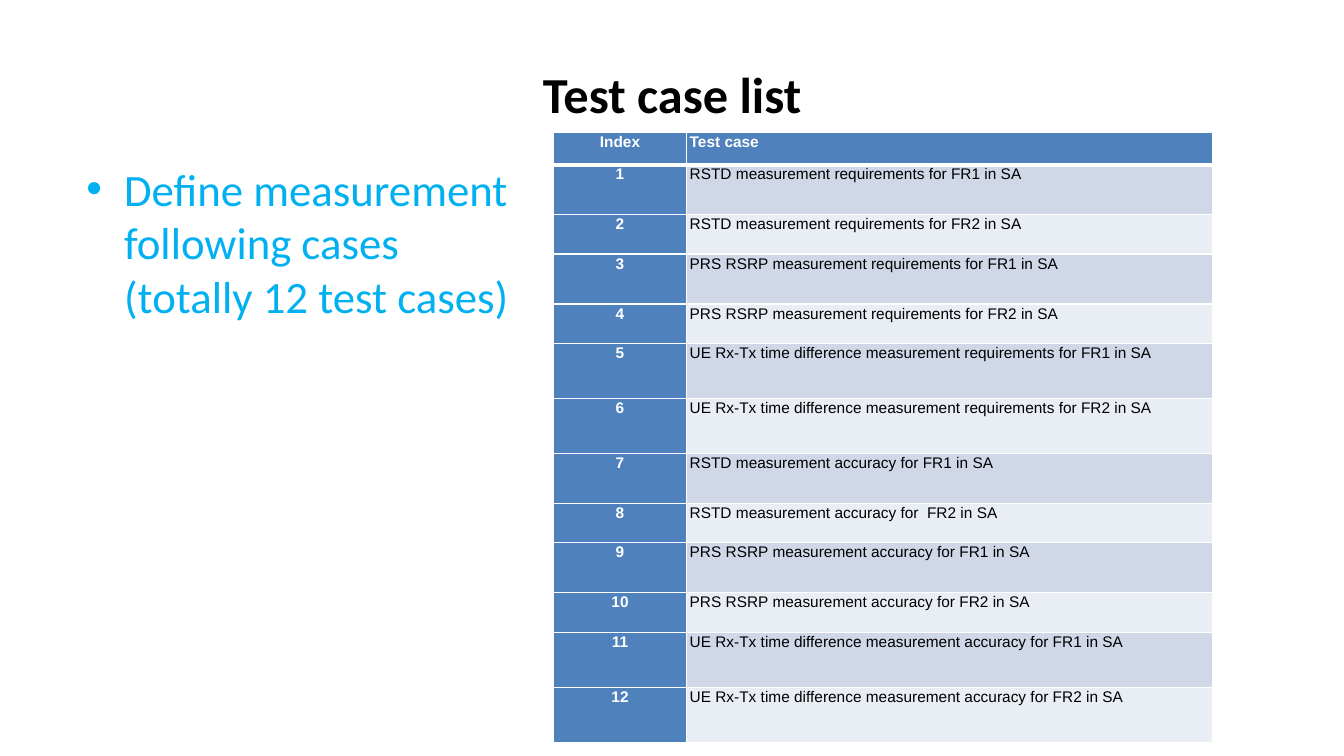
from lxml import etree
from pptx import Presentation
from pptx.dml.color import RGBColor
from pptx.enum.text import MSO_ANCHOR, PP_ALIGN
from pptx.oxml.ns import qn
from pptx.util import Cm, Pt

CENTER = PP_ALIGN.CENTER
LEFT = PP_ALIGN.LEFT
MIDDLE = MSO_ANCHOR.MIDDLE

BLACK = RGBColor(0x00, 0x00, 0x00)
WHITE = RGBColor(0xFF, 0xFF, 0xFF)
SKY = RGBColor(0x00, 0xB0, 0xF0)
BLUE = RGBColor(0x4F, 0x81, 0xBD)
BANDS = (RGBColor(0xD0, 0xD8, 0xE8), RGBColor(0xE9, 0xED, 0xF4))

TEST_CASES = [
    "RSTD measurement requirements for FR1 in SA",
    "RSTD measurement requirements for FR2 in SA",
    "PRS RSRP measurement requirements for FR1 in SA",
    "PRS RSRP measurement requirements for FR2 in SA",
    "UE Rx-Tx time difference measurement requirements for FR1 in SA",
    "UE Rx-Tx time difference measurement requirements for FR2 in SA",
    "RSTD measurement accuracy for FR1 in SA",
    "RSTD measurement accuracy for  FR2 in SA",
    "PRS RSRP measurement accuracy for FR1 in SA",
    "PRS RSRP measurement accuracy for FR2 in SA",
    "UE Rx-Tx time difference measurement accuracy for FR1 in SA",
    "UE Rx-Tx time difference measurement accuracy for FR2 in SA",
]
INDEX_WIDTH = 3.35
HEADER_HEIGHT = 0.82
PAIR_HEIGHTS = [(1.26, 0.99), (1.26, 0.99), (1.39, 1.39)] * 2
CASE_HEIGHTS = [height for pair in PAIR_HEIGHTS for height in pair]


def add_run(paragraph, text, size, font, color, bold=False):
    run = paragraph.add_run()
    run.text = text
    run.font.size = Pt(size)
    run.font.name = font
    run.font.bold = bold
    run.font.color.rgb = color


def add_title(slide, left, top, width, height):
    title = slide.shapes.add_textbox(Cm(left), Cm(top), Cm(width), Cm(height)).text_frame
    title.word_wrap = True
    title.vertical_anchor = MIDDLE
    heading = title.paragraphs[0]
    heading.alignment = CENTER
    add_run(heading, "Test case list", 36, "Calibri", BLACK, True)


def add_summary(slide, left, top, width, height):
    summary = slide.shapes.add_textbox(Cm(left), Cm(top), Cm(width), Cm(height)).text_frame
    summary.word_wrap = True
    point = summary.paragraphs[0]
    properties = point._p.get_or_add_pPr()
    properties.set("marL", str(Cm(0.95)))
    properties.set("indent", str(-Cm(0.95)))
    etree.SubElement(properties, qn("a:buFont"), typeface="Arial")
    etree.SubElement(properties, qn("a:buChar"), char="•")
    add_run(point, "Define measurement following cases (totally 12 test cases)",
            32, "Calibri", SKY)


def add_borders(cell, bottom_width, top_width):
    properties = cell._tc.get_or_add_tcPr()
    for side, width in (("L", 1), ("R", 1), ("T", top_width), ("B", bottom_width)):
        line = etree.SubElement(properties, qn("a:ln" + side), w=str(Pt(width)))
        fill = etree.SubElement(line, qn("a:solidFill"))
        etree.SubElement(fill, qn("a:srgbClr"), val=str(WHITE))


def fill_cell(cell, text, alignment, fill, color, bold):
    cell.margin_left = cell.margin_right = Cm(0.08)
    cell.margin_top = cell.margin_bottom = Cm(0)
    cell.fill.solid()
    cell.fill.fore_color.rgb = fill
    paragraph = cell.text_frame.paragraphs[0]
    paragraph.alignment = alignment
    paragraph.line_spacing = 1.07
    paragraph.space_after = Pt(9)
    add_run(paragraph, text, 11, "Arial", color, bold)


def add_case_table(slide, left, top, width):
    heights = [HEADER_HEIGHT] + CASE_HEIGHTS
    table = slide.shapes.add_table(len(heights), 2, Cm(left), Cm(top),
                                   Cm(width), Cm(sum(heights))).table
    table.columns[0].width = Cm(INDEX_WIDTH)
    table.columns[1].width = Cm(width - INDEX_WIDTH)

    rows = [("Index", "Test case")]
    rows += [(str(number), case) for number, case in enumerate(TEST_CASES, 1)]
    for row, ((index, case), height) in enumerate(zip(rows, heights)):
        table.rows[row].height = Cm(height)
        is_header = row == 0
        index_cell, case_cell = table.cell(row, 0), table.cell(row, 1)
        for cell in (index_cell, case_cell):
            add_borders(cell, 3 if is_header else 1, 3 if row == 1 else 1)
        fill_cell(index_cell, index, CENTER, BLUE, WHITE, True)
        if is_header:
            fill_cell(case_cell, case, LEFT, BLUE, WHITE, True)
        else:
            fill_cell(case_cell, case, LEFT, BANDS[(row - 1) % 2], BLACK, False)


def main():
    presentation = Presentation()
    presentation.slide_width = Cm(33.87)
    presentation.slide_height = Cm(19.05)
    slide = presentation.slides.add_slide(presentation.slide_layouts[6])
    add_title(slide, 1.7, 0.76, 30.48, 3.18)
    add_summary(slide, 1.93, 3.94, 11.61, 13.08)
    add_case_table(slide, 13.95, 3.33, 16.6)
    presentation.save("out.pptx")


if __name__ == "__main__":
    main()
